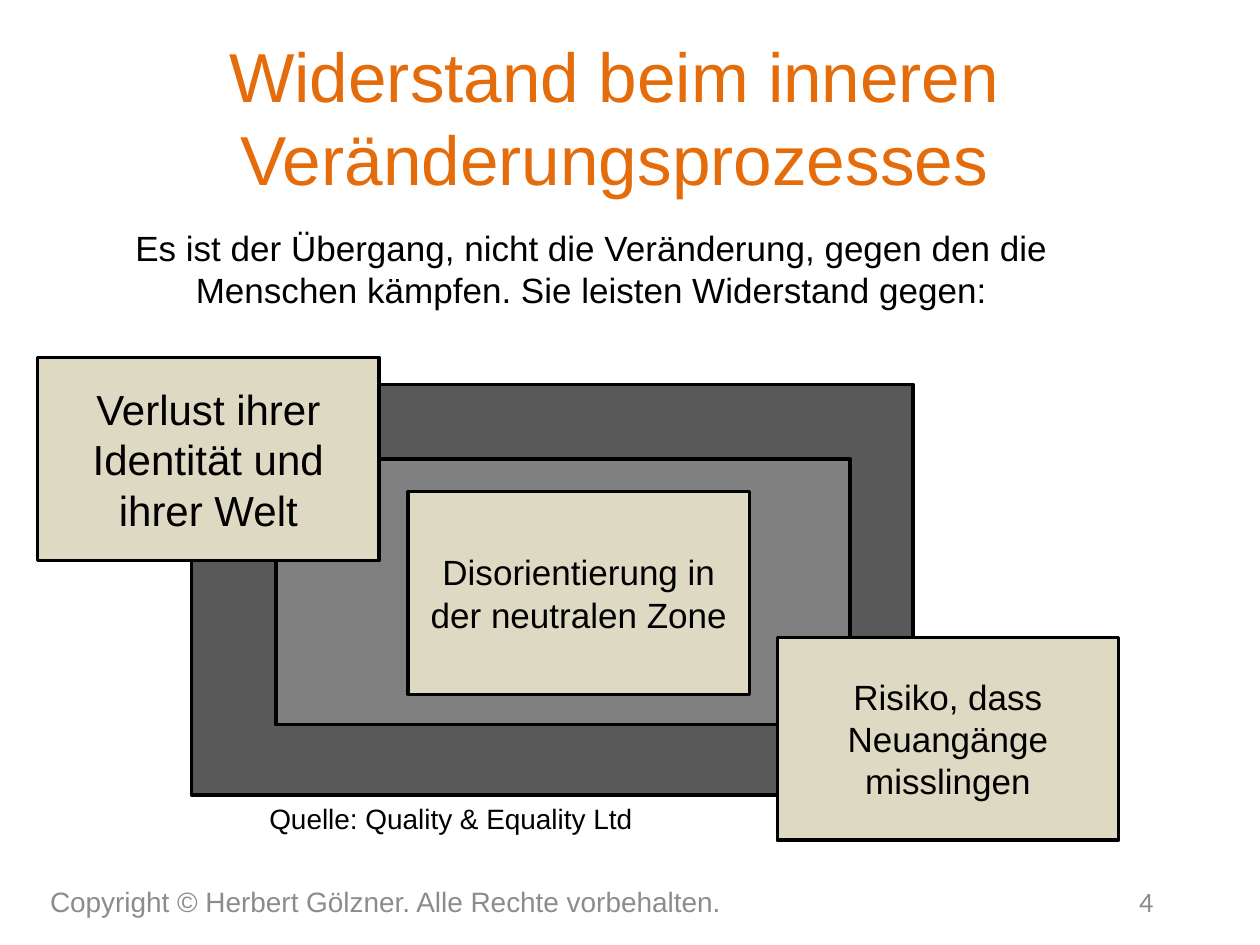
from pptx import Presentation
from pptx.dml.color import RGBColor
from pptx.enum.shapes import MSO_SHAPE
from pptx.enum.text import MSO_ANCHOR, PP_ALIGN
from pptx.util import Cm, Pt

RECT = MSO_SHAPE.RECTANGLE
TOP, MIDDLE = MSO_ANCHOR.TOP, MSO_ANCHOR.MIDDLE
LEFT, CENTER, RIGHT = PP_ALIGN.LEFT, PP_ALIGN.CENTER, PP_ALIGN.RIGHT

ORANGE = RGBColor(0xE4, 0x6C, 0x0A)
BLACK = RGBColor(0x00, 0x00, 0x00)
FOOTER_GRAY = RGBColor(0x8C, 0x8C, 0x8C)
DARK_GRAY = RGBColor(0x59, 0x59, 0x59)
MID_GRAY = RGBColor(0x80, 0x80, 0x80)
BEIGE = RGBColor(0xDD, 0xD9, 0xC3)

prs = Presentation()
prs.slide_width, prs.slide_height = Cm(25.4), Cm(19.05)
s = prs.slides.add_slide(prs.slide_layouts[6])


def set_text(sp, text, size, color, align, anchor, font="Arial"):
    tf = sp.text_frame
    tf.word_wrap = True
    tf.vertical_anchor = anchor
    tf.text = text
    p = tf.paragraphs[0]
    p.alignment = align
    r = p.runs[0]
    r.font.name, r.font.size = font, Pt(size)
    r.font.color.rgb = color


def add_box(left, top, width, height, fill):
    sp = s.shapes.add_shape(RECT, Cm(left), Cm(top), Cm(width), Cm(height))
    sp.shadow.inherit = False
    sp.fill.solid()
    sp.fill.fore_color.rgb = fill
    sp.line.color.rgb = BLACK
    sp.line.width = Pt(2)
    return sp


# Title, introduction, source and footer
texts = [
    (1.27, 0.76, 22.23, 3.18, "Widerstand beim inneren Veränderungsprozesses",
     39.6, ORANGE, CENTER, MIDDLE, "Arial"),
    (1.7, 4.45, 20.45, 2.2,
     "Es ist der Übergang, nicht die Veränderung, gegen den die "
     "Menschen kämpfen. Sie leisten Widerstand gegen:",
     20, BLACK, CENTER, TOP, "Arial"),
    (5.18, 16.03, 9.17, 0.94, "Quelle: Quality & Equality Ltd",
     16, BLACK, LEFT, TOP, "Arial"),
    (0.76, 17.65, 16.15, 1.02,
     "Copyright © Herbert Gölzner. Alle Rechte vorbehalten.",
     16, FOOTER_GRAY, LEFT, MIDDLE, "Arial"),
    (17.58, 17.65, 5.92, 1.02, "4", 16, FOOTER_GRAY, RIGHT, MIDDLE, "Calibri"),
]
for left, top, width, height, *style in texts:
    sp = s.shapes.add_textbox(Cm(left), Cm(top), Cm(width), Cm(height))
    set_text(sp, *style)

# Nested background frames
add_box(3.86, 7.75, 14.55, 8.28, DARK_GRAY)
add_box(5.56, 9.25, 11.58, 5.36, MID_GRAY)

# Three reasons for resistance, from top left to bottom right
reasons = [
    (0.76, 7.21, "Verlust ihrer Identität und ihrer Welt", 24),
    (8.23, 9.91, "Disorientierung in der neutralen Zone", 20),
    (15.67, 12.85, "Risiko, dass Neuangänge misslingen", 20),
]
for left, top, text, size in reasons:
    sp = add_box(left, top, 6.88, 4.09, BEIGE)
    set_text(sp, text, size, BLACK, CENTER, MIDDLE)

prs.save("out.pptx")
